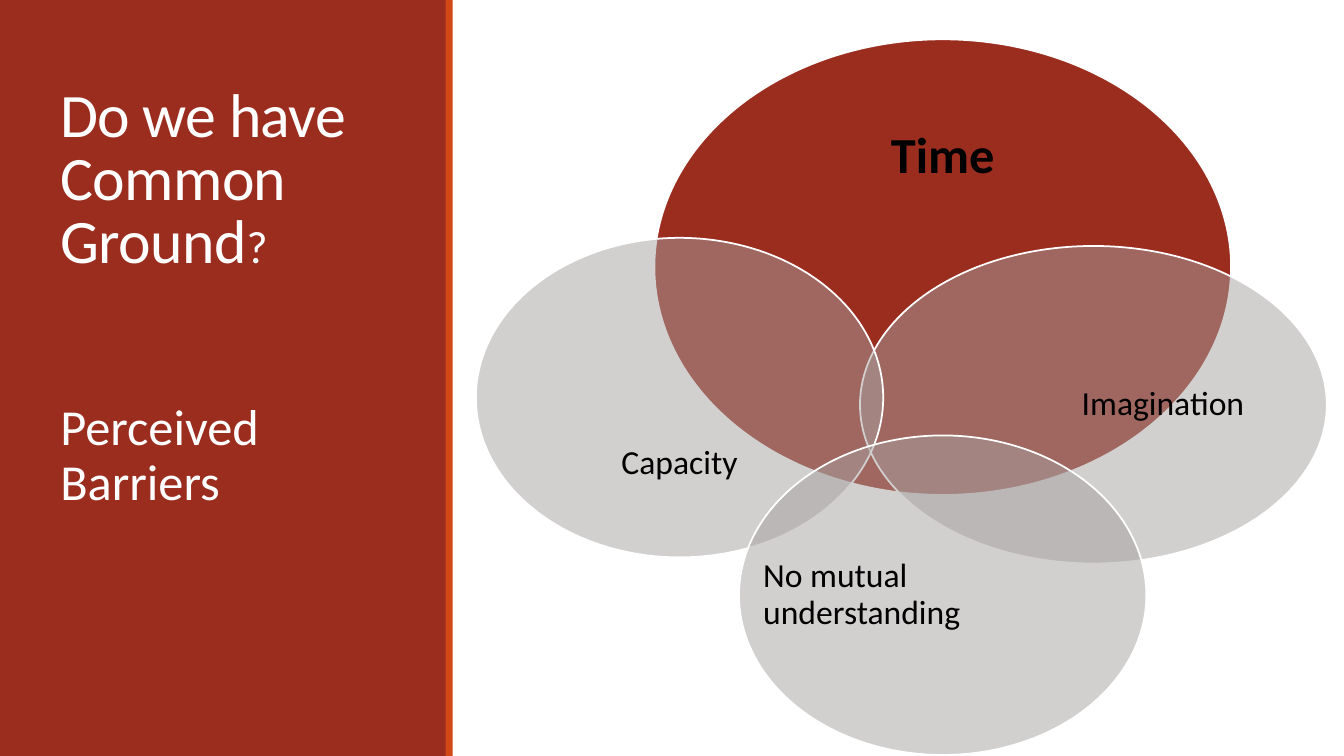
"""Build a slide with a title panel and four overlapping ovals of perceived barriers."""
from lxml import etree
from pptx import Presentation
from pptx.dml.color import RGBColor
from pptx.enum.shapes import MSO_SHAPE
from pptx.enum.text import MSO_ANCHOR, MSO_AUTO_SIZE, PP_ALIGN
from pptx.oxml.ns import qn
from pptx.util import Inches, Pt

RECTANGLE, OVAL = MSO_SHAPE.RECTANGLE, MSO_SHAPE.OVAL
TOP, MIDDLE, BOTTOM = MSO_ANCHOR.TOP, MSO_ANCHOR.MIDDLE, MSO_ANCHOR.BOTTOM
LEFT, CENTER = PP_ALIGN.LEFT, PP_ALIGN.CENTER
NO_AUTOFIT = MSO_AUTO_SIZE.NONE

BRICK = RGBColor(0x9B, 0x2D, 0x1F)
ORANGE = RGBColor(0xD3, 0x48, 0x17)
GRAY = RGBColor(0xA6, 0xA1, 0xA1)
WHITE = RGBColor(0xFF, 0xFF, 0xFF)
BLACK = RGBColor(0, 0, 0)
FONT = "Calibri"

SLIDE_WIDTH, SLIDE_HEIGHT = 13.33, 7.5
PANEL_WIDTH, STRIPE_LEFT, STRIPE_WIDTH = 4.43, 4.42, 0.07
TEXT_LEFT, TEXT_WIDTH = 0.5, 3.5
TITLE_BOX = (TEXT_LEFT, 2.09, TEXT_WIDTH, 0.7)
SUBTITLE_BOX = (TEXT_LEFT, 3.94, TEXT_WIDTH, 2.95)
TEXT_MARGINS = (0.1, 0.05, 0.1, 0.05)

TITLE_RUNS = [("Do we have Common Ground", 44.1), ("?", 32.4)]
SUBTITLE_RUNS = [("Perceived Barriers", 36)]

BARRIERS = [
    {"label": "Time", "box": (6.49, 0.39, 5.72, 4.52), "insets": (0.52, 0.61, 0.52, 2.79),
     "fill": BRICK, "opacity": 100, "size": 36, "bold": True, "align": CENTER},
    {"label": "Imagination", "box": (8.53, 2.44, 4.63, 3.15), "insets": (1.61, 0.36, 0.23, 0.36),
     "fill": GRAY, "opacity": 50, "size": 24, "bold": False, "align": CENTER},
    {"label": "Capacity", "box": (4.72, 2.36, 4.04, 3.17), "insets": (0.37, 1.74, 0.37, 0.43),
     "fill": GRAY, "opacity": 50, "size": 24, "bold": False, "align": CENTER},
    {"label": "No mutual understanding", "box": (7.33, 4.32, 4.04, 3.17),
     "insets": (0.24, 0.37, 1.71, 0.37),
     "fill": GRAY, "opacity": 50, "size": 24, "bold": False, "align": LEFT},
]


def to_inches(box):
    return [Inches(length) for length in box]


def add_filled_shape(slide, kind, box, color, opacity=100):
    shape = slide.shapes.add_shape(kind, *to_inches(box))
    shape.shadow.inherit = False
    shape.fill.solid()
    shape.fill.fore_color.rgb = color
    shape.line.fill.background()
    if opacity < 100:
        color_element = shape.fill._xPr.find(qn("a:solidFill"))[0]
        etree.SubElement(color_element, qn("a:alpha"), val=str(opacity * 1000))
    return shape


def write_text(shape, runs, color, anchor, align=LEFT, line_spacing=0.9,
               bold=False, margins=TEXT_MARGINS, tracking=0):
    frame = shape.text_frame
    frame.word_wrap = True
    frame.auto_size = NO_AUTOFIT
    frame.vertical_anchor = anchor
    (frame.margin_left, frame.margin_top,
     frame.margin_right, frame.margin_bottom) = to_inches(margins)
    paragraph = frame.paragraphs[0]
    paragraph.alignment = align
    paragraph.line_spacing = line_spacing
    for text, size in runs:
        run = paragraph.add_run()
        run.text = text
        run.font.name = FONT
        run.font.size = Pt(size)
        run.font.bold = bold
        run.font.color.rgb = color
        if tracking:
            run.font._element.set("spc", str(tracking))


def add_barrier(slide, barrier):
    box = barrier["box"]
    oval = add_filled_shape(slide, OVAL, box, barrier["fill"], barrier["opacity"])
    oval.line.color.rgb = WHITE
    oval.line.width = Pt(1.25)
    label = slide.shapes.add_textbox(*to_inches(box))
    write_text(label, [(barrier["label"], barrier["size"])], BLACK, MIDDLE,
               barrier["align"], bold=barrier["bold"], margins=barrier["insets"])


def main():
    presentation = Presentation()
    presentation.slide_width = Inches(SLIDE_WIDTH)
    presentation.slide_height = Inches(SLIDE_HEIGHT)
    slide = presentation.slides.add_slide(presentation.slide_layouts[5])

    add_filled_shape(slide, RECTANGLE, (0, 0, PANEL_WIDTH, SLIDE_HEIGHT), BRICK)
    add_filled_shape(slide, RECTANGLE, (STRIPE_LEFT, 0, STRIPE_WIDTH, SLIDE_HEIGHT), ORANGE)

    title = slide.shapes.title
    slide.shapes._spTree.append(title._element)
    title.left, title.top, title.width, title.height = to_inches(TITLE_BOX)
    write_text(title, TITLE_RUNS, WHITE, BOTTOM, line_spacing=0.85, tracking=-50)

    for barrier in BARRIERS:
        add_barrier(slide, barrier)

    subtitle = slide.shapes.add_textbox(*to_inches(SUBTITLE_BOX))
    write_text(subtitle, SUBTITLE_RUNS, WHITE, TOP)
    presentation.save("out.pptx")


if __name__ == "__main__":
    main()
